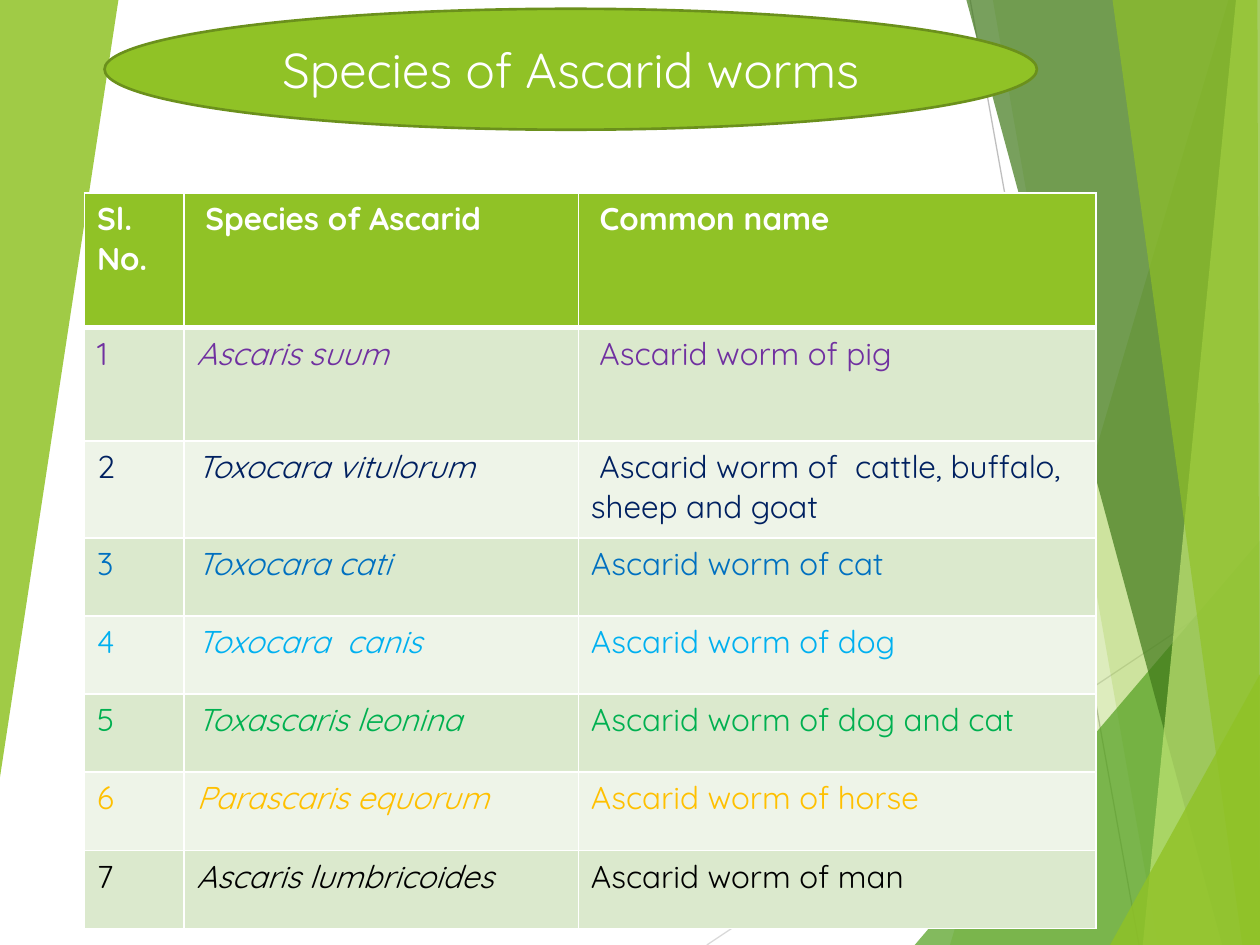
from lxml import etree
from pptx import Presentation
from pptx.dml.color import RGBColor
from pptx.enum.shapes import MSO_CONNECTOR, MSO_SHAPE
from pptx.enum.text import MSO_ANCHOR, PP_ALIGN
from pptx.oxml.ns import qn
from pptx.util import Inches, Pt

STRAIGHT = MSO_CONNECTOR.STRAIGHT
OVAL = MSO_SHAPE.OVAL
MIDDLE = MSO_ANCHOR.MIDDLE
CENTER = PP_ALIGN.CENTER

FONT = "Quicksand"
WHITE = RGBColor(0xFF, 0xFF, 0xFF)
BLACK = RGBColor(0x00, 0x00, 0x00)
LIME = RGBColor(0x90, 0xC2, 0x26)
LIME_EDGE = RGBColor(0x6B, 0x90, 0x1C)
LEAF = RGBColor(0x54, 0xA0, 0x21)
FOREST = RGBColor(0x3F, 0x78, 0x19)
PALE_LIME = RGBColor(0xC0, 0xE4, 0x74)
ODD_ROW = RGBColor(0xDB, 0xE9, 0xCD)
EVEN_ROW = RGBColor(0xEE, 0xF4, 0xE8)
PURPLE = RGBColor(0x70, 0x30, 0xA0)
NAVY = RGBColor(0x00, 0x20, 0x60)
BLUE = RGBColor(0x00, 0x70, 0xC0)
SKY = RGBColor(0x00, 0xB0, 0xF0)
GREEN = RGBColor(0x00, 0xB0, 0x50)
AMBER = RGBColor(0xFF, 0xC0, 0x00)
GRAY = RGBColor(0xBF, 0xBF, 0xBF)
LIGHT_GRAY = RGBColor(0xD9, 0xD9, 0xD9)

RAYS = [((5.61, 7.5), (10, 4.57), LIGHT_GRAY), ((7.7, 0), (9.04, 7.5), GRAY)]

# Corner points, colour and opacity in percent
FACETS = [
    ([(9.75, 0), (7.54, 7.5), (10, 7.5), (10, 0)], LIME, 30),
    ([(7.88, 0), (9.19, 7.5), (10, 7.5), (10, 0)], LIME, 20),
    ([(7.26, 7.5), (10, 4.29), (10, 7.5)], LEAF, 72),
    ([(7.67, 0), (9.7, 7.5), (10, 7.5), (10, 0)], FOREST, 70),
    ([(9.81, 0), (9.07, 7.5), (10, 7.5), (10, 0)], PALE_LIME, 70),
    ([(8.83, 0), (9.86, 7.5), (10, 7.5), (9.98, 0)], LIME, 65),
    ([(8.81, 7.5), (10, 5.35), (10, 7.5)], LIME, 80),
    ([(0, 0), (0.94, 0), (0, 6.17)], LIME, 85),
]

HEADINGS = ["Sl. No.", " Species of Ascarid", " Common name"]
SPECIES = [
    ("Ascaris suum", " Ascarid worm of pig", PURPLE),
    ("Toxocara vitulorum", " Ascarid worm of  cattle, buffalo, sheep and goat", NAVY),
    ("Toxocara cati", "Ascarid worm of cat", BLUE),
    ("Toxocara  canis", "Ascarid worm of dog", SKY),
    ("Toxascaris leonina", "Ascarid worm of dog and cat", GREEN),
    ("Parascaris equorum", "Ascarid worm of horse", AMBER),
    ("Ascaris lumbricoides", "Ascarid worm of man", BLACK),
]
COLUMN_WIDTHS = [0.79, 3.13, 4.11]
ROW_HEIGHTS = [1.07, 0.9, 0.77] + [0.62] * 5


def add_ray(slide, start, end, color):
    ray = slide.shapes.add_connector(STRAIGHT, *map(Inches, start + end))
    ray.line.color.rgb = color
    ray.line.width = Pt(0.75)
    etree.SubElement(ray._element.spPr, qn("a:effectLst"))


def add_facet(slide, points, color, opacity):
    corners = [(Inches(x), Inches(y)) for x, y in points]
    builder = slide.shapes.build_freeform(*corners[0])
    builder.add_line_segments(corners[1:], close=True)
    facet = builder.convert_to_shape()
    facet.shadow.inherit = False
    facet.line.fill.background()
    facet.fill.solid()
    facet.fill.fore_color.rgb = color
    color_node = facet._element.spPr.find(qn("a:solidFill"))[0]
    etree.SubElement(color_node, qn("a:alpha"), val=str(opacity * 1000))


def add_text(para, text, size, color, bold=False, italic=False):
    span = para.add_run()
    span.text = text
    span.font.name = FONT
    span.font.size = Pt(size)
    span.font.color.rgb = color
    span.font.bold = bold
    span.font.italic = italic


def add_title(slide, text):
    ellipse = slide.shapes.add_shape(
        OVAL, Inches(0.83), Inches(0.07), Inches(7.4), Inches(0.96))
    ellipse.shadow.inherit = False
    ellipse.fill.solid()
    ellipse.fill.fore_color.rgb = LIME
    ellipse.line.color.rgb = LIME_EDGE
    ellipse.line.width = Pt(1.5)
    ellipse.text_frame.word_wrap = True
    ellipse.text_frame.vertical_anchor = MIDDLE
    para = ellipse.text_frame.paragraphs[0]
    para.alignment = CENTER
    add_text(para, text, 28, WHITE)


def set_borders(cell, top, bottom):
    """Draw white cell borders; the side ones are 1 point wide."""
    properties = cell._tc.get_or_add_tcPr()
    widths = {"a:lnL": 1, "a:lnR": 1, "a:lnT": top, "a:lnB": bottom}
    for position, (tag, width) in enumerate(widths.items()):
        border = etree.Element(qn(tag), w=str(Pt(width)))
        fill = etree.SubElement(border, qn("a:solidFill"))
        etree.SubElement(fill, qn("a:srgbClr"), val=str(WHITE))
        properties.insert(position, border)


def add_species_table(slide):
    rows = [(HEADINGS, WHITE)]
    for number, (species, common_name, color) in enumerate(SPECIES, 1):
        rows.append(([str(number), species, common_name], color))
    table = slide.shapes.add_table(
        len(rows), len(HEADINGS), Inches(0.67), Inches(1.53),
        Inches(sum(COLUMN_WIDTHS)), Inches(sum(ROW_HEIGHTS))).table
    for column, width in zip(table.columns, COLUMN_WIDTHS):
        column.width = Inches(width)
    for row, height in zip(table.rows, ROW_HEIGHTS):
        row.height = Inches(height)

    for r, (texts, color) in enumerate(rows):
        header = r == 0
        band = LIME if header else ODD_ROW if r % 2 else EVEN_ROW
        for c, text in enumerate(texts):
            cell = table.cell(r, c)
            cell.fill.solid()
            cell.fill.fore_color.rgb = band
            set_borders(cell, top=3 if r == 1 else 1, bottom=3 if header else 1)
            add_text(cell.text_frame.paragraphs[0], text, 18, color,
                     bold=header, italic=c == 1 and not header)


def main():
    deck = Presentation()
    deck.slide_width = Inches(10)
    deck.slide_height = Inches(7.5)
    slide = deck.slides.add_slide(deck.slide_layouts[6])
    for ray in RAYS:
        add_ray(slide, *ray)
    for facet in FACETS:
        add_facet(slide, *facet)
    add_species_table(slide)
    add_title(slide, "Species of Ascarid worms")
    deck.save("out.pptx")


if __name__ == "__main__":
    main()
